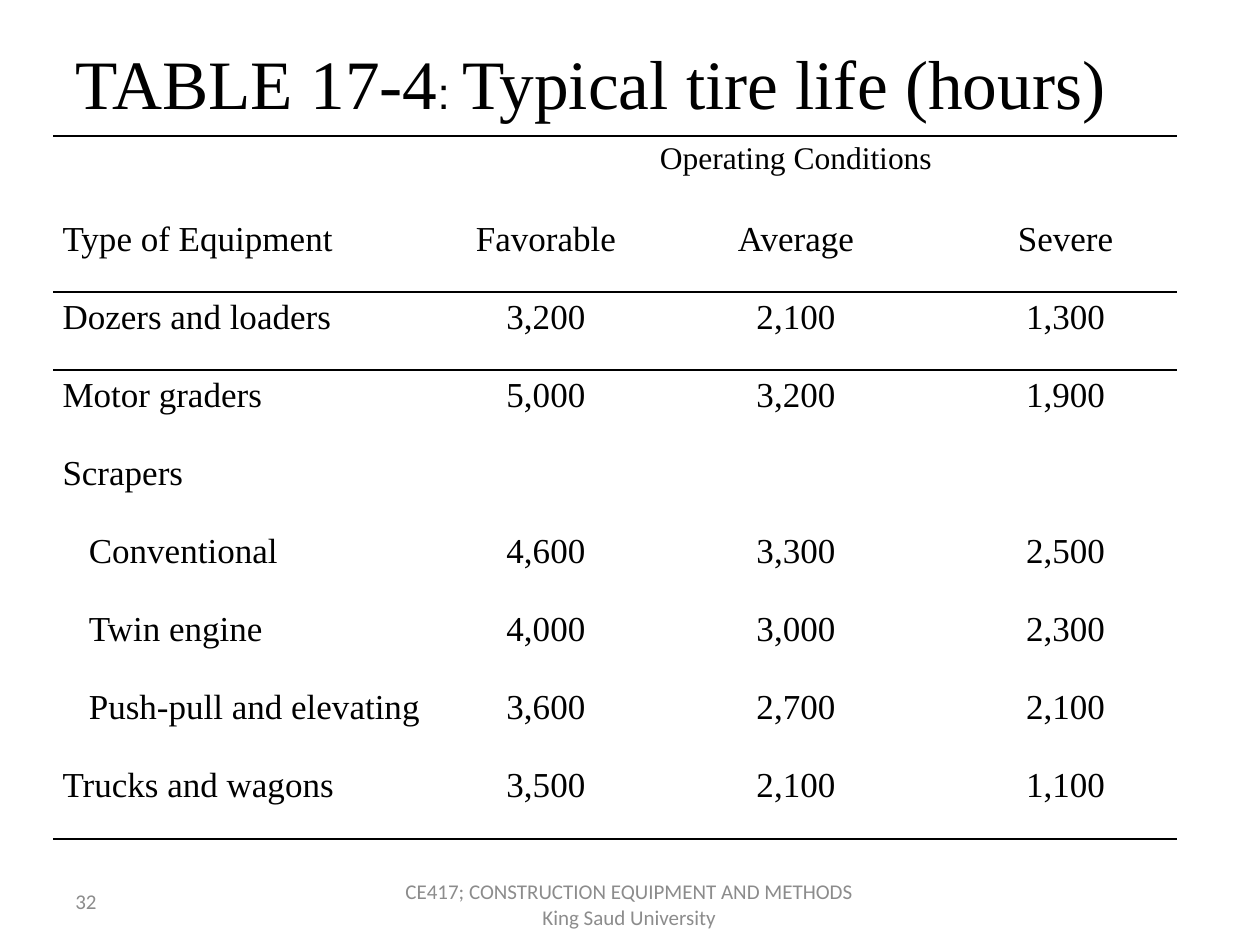
import pptx
import pptx.dml.color
import pptx.enum.text
import pptx.oxml
import pptx.oxml.ns
import pptx.util
from pptx.util import Cm

BLACK = pptx.dml.color.RGBColor(0x00, 0x00, 0x00)
GRAY = pptx.dml.color.RGBColor(0x8C, 0x8C, 0x8C)
SERIF = "Times New Roman"
NO_STYLE_NO_GRID = "{2D5ABB26-0587-4C30-8999-92F81FD0307C}"
ALIGN = pptx.enum.text.PP_ALIGN
ANCHOR = pptx.enum.text.MSO_ANCHOR


def set_font(font, name, size, color):
    font.name = name
    font.size = pptx.util.Pt(size)
    font.color.rgb = color


def add_rule(cell, side, points):
    """Draw a black line on one side of a cell: T for top, B for bottom."""
    cell._tc.get_or_add_tcPr().append(pptx.oxml.parse_xml(
        f'<a:ln{side} {pptx.oxml.ns.nsdecls("a")} w="{pptx.util.Pt(points)}">'
        f'<a:solidFill><a:srgbClr val="{BLACK}"/></a:solidFill></a:ln{side}>'))


deck = pptx.Presentation()
deck.slide_width, deck.slide_height = Cm(25.4), Cm(19.05)
slide = deck.slides.add_slide(deck.slide_layouts[5])

# Title
title = slide.shapes.title
title.left, title.top, title.width, title.height = Cm(1.27), Cm(0.76), Cm(22.86), Cm(3.18)
heading = title.text_frame
heading.auto_size = pptx.enum.text.MSO_AUTO_SIZE.NONE
heading.vertical_anchor = ANCHOR.TOP
heading.margin_top = Cm(0.05)
heading.paragraphs[0].alignment = ALIGN.LEFT
for text, name, size in [("TABLE 17-4", SERIF, 39.6), (": ", "Arial", 25.2),
                         ("Typical tire life (hours)", SERIF, 39.6)]:
    run = heading.paragraphs[0].add_run()
    run.text = text
    set_font(run.font, name, size, BLACK)

# Tire life table
tire_life = [
    ("", "", "Operating Conditions", ""),
    ("Type of Equipment", "Favorable", "Average", "Severe"),
    ("Dozers and loaders", "3,200", "2,100", "1,300"),
    ("Motor graders", "5,000", "3,200", "1,900"),
    ("Scrapers", "", "", ""),
    ("Conventional", "4,600", "3,300", "2,500"),
    ("Twin engine", "4,000", "3,000", "2,300"),
    ("Push-pull and elevating", "3,600", "2,700", "2,100"),
    ("Trucks and wagons", "3,500", "2,100", "1,100"),
]
scraper_types = range(5, 8)
rules = {0: ("T", 1.5), 1: ("B", 1), 2: ("T", 1), 8: ("B", 1.5)}
column_widths = [8.08, 3.71, 6.37, 4.5]

table = slide.shapes.add_table(len(tire_life), len(column_widths), Cm(1.07), Cm(2.74),
                               Cm(sum(column_widths)), Cm(14.17)).table
table.first_row = table.horz_banding = False
table._tbl.tblPr.find(pptx.oxml.ns.qn("a:tableStyleId")).text = NO_STYLE_NO_GRID
for column, width in zip(table.columns, column_widths):
    column.width = Cm(width)

for r, entries in enumerate(tire_life):
    for c, entry in enumerate(entries):
        cell = table.cell(r, c)
        cell.margin_left = cell.margin_right = Cm(0.19)
        cell.margin_top = cell.margin_bottom = 0
        if r in rules:
            add_rule(cell, *rules[r])
        cell.fill.background()
        cell.text = entry
        paragraph = cell.text_frame.paragraphs[0]
        paragraph.line_spacing = 1.15
        paragraph.alignment = ALIGN.CENTER if c else ALIGN.LEFT
        if c == 0 and r in scraper_types:
            paragraph._p.get_or_add_pPr().set("marL", str(Cm(0.53)))
        set_font(paragraph.font, SERIF, 20 if r else 18, BLACK)

# Page number and footer
for text, left, top, width, height, alignment in [
    ("32", 1.27, 17.65, 5.92, 1.02, ALIGN.LEFT),
    ("CE417; CONSTRUCTION EQUIPMENT AND METHODS King Saud University",
     7.82, 17.78, 9.73, 0.89, ALIGN.CENTER),
]:
    note = slide.shapes.add_textbox(Cm(left), Cm(top), Cm(width), Cm(height)).text_frame
    note.word_wrap = True
    note.vertical_anchor = ANCHOR.MIDDLE
    note.text = text
    note.paragraphs[0].alignment = alignment
    set_font(note.paragraphs[0].font, "Calibri", 12, GRAY)

deck.save("out.pptx")
